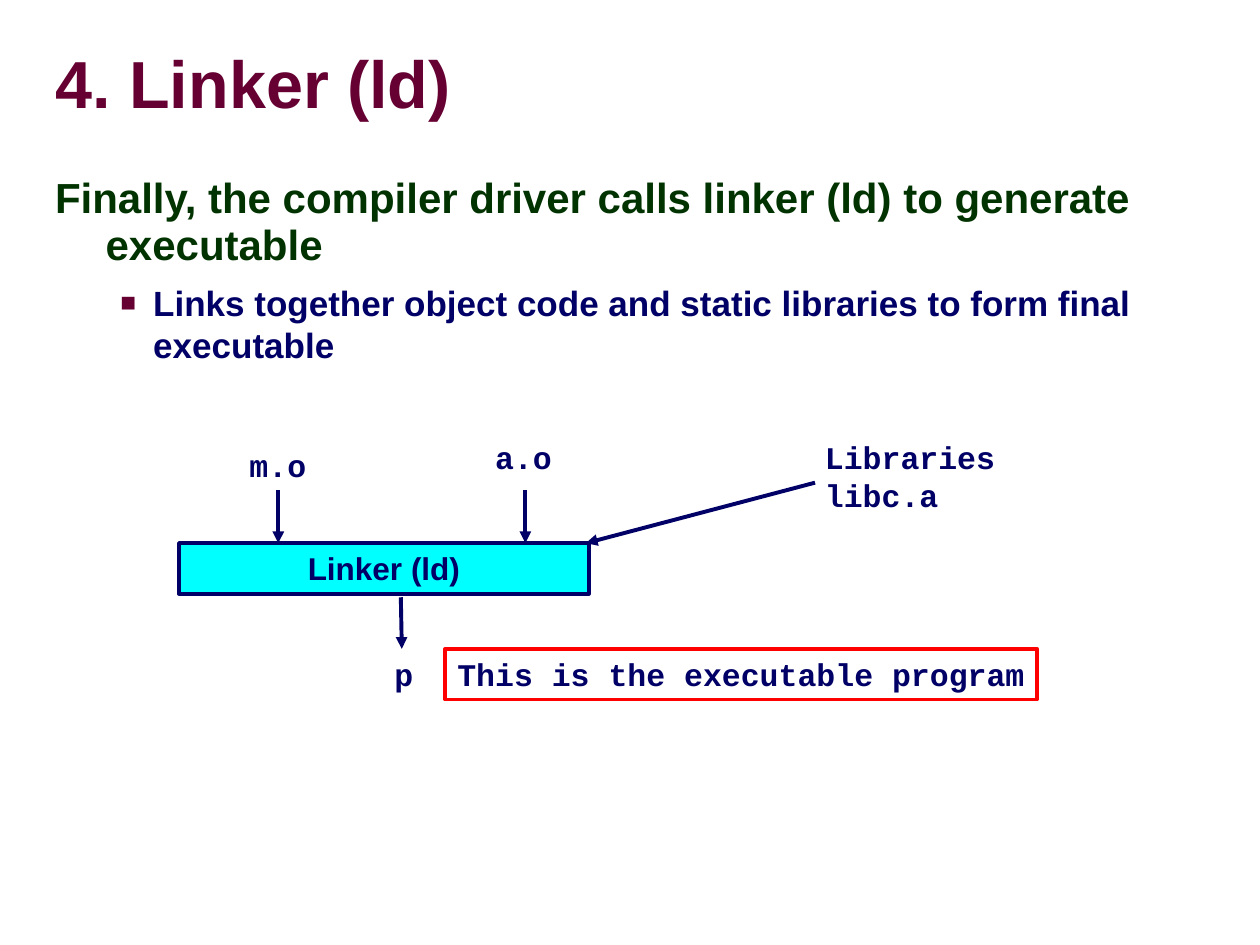
from lxml.etree import SubElement
from pptx import Presentation
from pptx.dml.color import RGBColor
from pptx.enum.shapes import MSO_CONNECTOR as Connector, MSO_SHAPE as Shape
from pptx.enum.text import MSO_ANCHOR as Anchor, MSO_AUTO_SIZE as AutoSize, PP_ALIGN as Align
from pptx.oxml.ns import qn
from pptx.util import Cm, Pt

NAVY, MAROON, GREEN, CYAN, RED = "000066", "660033", "003300", "00FFFF", "FF0000"
SANS, MONO = "Arial", "Courier New"

TITLE = "4. Linker (ld)"
BODY = [
    dict(text="Finally, the compiler driver calls linker (ld) to generate executable",
         size=24, color=GREEN, before=15, spacing=0.95, margin=1.07, indent=-1.02, bullet=None),
    dict(text="Links together object code and static libraries to form final executable",
         size=20, color=NAVY, before=6.2, spacing=1.0, margin=2.03, indent=-0.66, bullet="■"),
]
LINKER = ("Linker (ld)", (3.61, 10.95, 8.26, 1.02))
LABELS = [
    ("m.o", (4.78, 8.86, 1.65, 1.02)),
    ("a.o", (9.73, 8.71, 1.65, 1.02)),
    ("Libraries\nlibc.a", (16.38, 8.71, 3.94, 1.78)),
    ("p", (7.7, 13.08, 0.89, 1.02)),
]
RESULT = ("This is the executable program", (8.97, 13.08, 11.94, 1.02))
ARROWS = [
    ((5.61, 9.88), (5.61, 10.95)),
    ((10.59, 9.88), (10.59, 10.95)),
    ((16.43, 9.73), (11.81, 10.95)),
    ((8.08, 12.04), (8.1, 13.08)),
]


def rgb(color):
    """Turn a hex string into a colour."""
    return RGBColor.from_string(color)


def set_font(paragraph, size, color, name=SANS):
    """Give a paragraph its bold font."""
    font = paragraph.font
    font.name, font.size, font.bold = name, Pt(size), True
    font.color.rgb = rgb(color)


def add_bullet(properties, char):
    """Add a small maroon bullet to paragraph properties."""
    SubElement(SubElement(properties, qn("a:buClr")), qn("a:srgbClr"), val=MAROON)
    SubElement(properties, qn("a:buSzPct"), val="75000")
    SubElement(properties, qn("a:buFont"), typeface=SANS)
    SubElement(properties, qn("a:buChar"), char=char)


def add_title(slide):
    """Place and format the title placeholder."""
    title = slide.shapes.title
    title.left, title.top, title.width, title.height = Cm(1.12), Cm(0.69), Cm(24.21), Cm(2.16)
    frame = title.text_frame
    frame.text = TITLE
    frame.auto_size, frame.vertical_anchor = AutoSize.NONE, Anchor.MIDDLE
    frame.margin_left = frame.margin_right = frame.margin_top = frame.margin_bottom = 0
    heading = frame.paragraphs[0]
    heading.alignment, heading.line_spacing = Align.LEFT, 0.87
    set_font(heading, 38, MAROON)


def add_body(slide):
    """Add the statement and its bulleted detail."""
    frame = slide.shapes.add_textbox(Cm(0.81), Cm(3.4), Cm(23.09), Cm(14.5)).text_frame
    frame.word_wrap = True
    frame.text = "\n".join(item["text"] for item in BODY)
    for level, (paragraph, item) in enumerate(zip(frame.paragraphs, BODY)):
        paragraph.level = level
        paragraph.line_spacing, paragraph.space_before = item["spacing"], Pt(item["before"])
        properties = paragraph._p.get_or_add_pPr()
        properties.set("marL", str(Cm(item["margin"])))
        properties.set("indent", str(Cm(item["indent"])))
        if item["bullet"]:
            add_bullet(properties, item["bullet"])
        set_font(paragraph, item["size"], item["color"])


def write_label(shape, text, name=MONO, align=Align.LEFT):
    """Write unwrapped diagram text into a shape."""
    frame = shape.text_frame
    frame.word_wrap, frame.vertical_anchor = False, Anchor.TOP
    frame.text = text
    for paragraph in frame.paragraphs:
        paragraph.alignment = align
        set_font(paragraph, 18, NAVY, name)


def add_box(slide, place, line, width, fill=None):
    """Add an outlined rectangle, filled if a colour is given."""
    box = slide.shapes.add_shape(Shape.RECTANGLE, *map(Cm, place))
    box.shadow.inherit = False
    box.line.color.rgb, box.line.width = rgb(line), Pt(width)
    if fill:
        box.fill.solid()
        box.fill.fore_color.rgb = rgb(fill)
    else:
        box.fill.background()
    return box


def add_arrow(slide, start, end):
    """Add a straight arrow between two points."""
    arrow = slide.shapes.add_connector(Connector.STRAIGHT, *map(Cm, start + end))
    arrow.line.color.rgb, arrow.line.width = rgb(NAVY), Pt(2.25)
    SubElement(arrow.line._get_or_add_ln(), qn("a:tailEnd"), type="triangle")
    SubElement(arrow._element.spPr, qn("a:effectLst"))


def main():
    """Build the linker slide."""
    deck = Presentation()
    deck.slide_width, deck.slide_height = Cm(25.4), Cm(19.05)
    slide = deck.slides.add_slide(deck.slide_layouts[5])
    add_title(slide)
    add_body(slide)
    linker, place = LINKER
    write_label(add_box(slide, place, NAVY, 2.25, CYAN), linker, SANS, Align.CENTER)
    for label, place in LABELS:
        write_label(slide.shapes.add_textbox(*map(Cm, place)), label)
    for start, end in ARROWS:
        add_arrow(slide, start, end)
    result, place = RESULT
    write_label(add_box(slide, place, RED, 2), result)
    deck.save("out.pptx")


if __name__ == "__main__":
    main()
